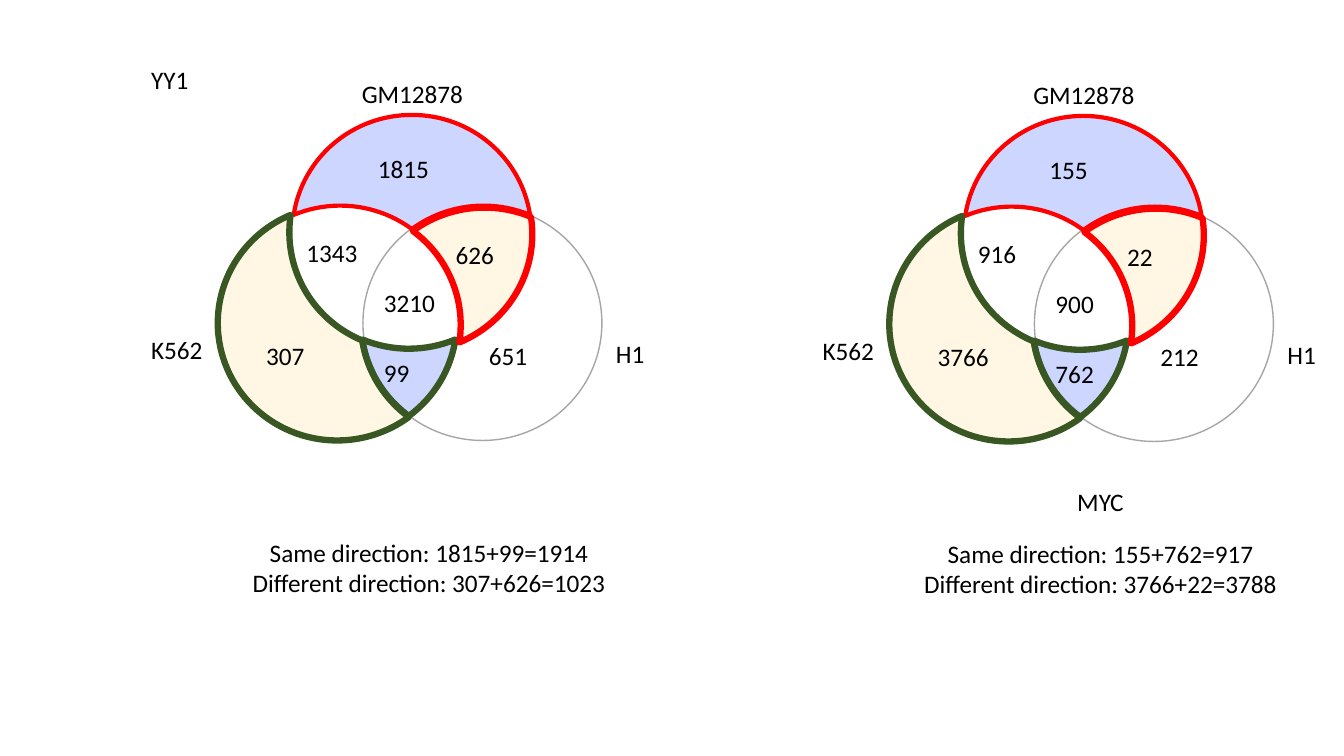
from dataclasses import dataclass
from math import atan2, ceil, cos, floor, hypot, pi, sin, sqrt, tan

from lxml import etree
from pptx import Presentation
from pptx.dml.color import RGBColor
from pptx.enum import shapes, text
from pptx.oxml import ns
from pptx.util import Inches, Pt

# Per panel: offset, title and its box, counts by region, summary lines
PANELS = [
    dict(offset=(0, 0), title="YY1", title_box=(1.4, 0.59, 0.58, 0.4), title_centred=False,
         counts=dict(K="307", G="1815", H="651", GK="1343", KH="99", GH="626", GKH="3210"),
         summary=["Same direction: 1815+99=1914", "Different direction: 307+626=1023"]),
    dict(offset=(6.66, 0.01), title="MYC", title_box=(10.33, 4.78, 1.17, 0.4), title_centred=True,
         counts=dict(K="3766", G="155", H="212", GK="916", KH="762", GH="22", GKH="900"),
         summary=["Same direction: 155+762=917", "Different direction: 3766+22=3788"]),
]
SET_LABELS = [("GM12878", (3.49, 0.73, 1.22, 0.4)), ("K562", (1.4, 3.27, 0.72, 0.4)),
              ("H1", (6.01, 3.31, 0.49, 0.4))]
COUNT_AT = dict(K=(2.54, 3.33), G=(3.65, 1.47), H=(4.75, 3.33), GK=(2.94, 2.31),
                KH=(3.71, 3.5), GH=(4.42, 2.33), GKH=(3.71, 2.8))
COUNT_SIZE = (0.82, 0.4)
SUMMARY_BOX = (2.38, 5.28, 3.75, 0.71)
CIRCLE_AT = dict(G=(2.89, 1.14), K=(2.18, 2.04), H=(3.6, 2.04))
CIRCLE_SIZE = (2.37, 2.33)
RX, RY = (side / 2 for side in CIRCLE_SIZE)
CENTRES = {name: (x + RX, y + RY) for name, (x, y) in CIRCLE_AT.items()}


@dataclass(frozen=True)
class Theme:
    font: str = "Calibri"
    size: int = 18
    ink: str = "000000"
    outline: str = "A6A6A6"
    blue: str = "0432FF"
    yellow: str = "FFD579"
    red: str = "FF0000"
    green: str = "385723"
    fill_alpha: int = 20
    thin: float = 1
    medium: float = 3
    thick: float = 4.5


THEME = Theme()


def crossings(a, b):
    """Both points where two circles meet, the upper one first."""
    (ax, ay), (bx, by) = CENTRES[a], CENTRES[b]
    dx, dy = (bx - ax) / RX / 2, (by - ay) / RY / 2
    half = hypot(dx, dy)
    k = sqrt(1 - half ** 2) / half
    mx, my = (ax + bx) / 2, (ay + by) / 2
    pair = [(mx - s * dy * k * RX, my + s * dx * k * RY) for s in (1, -1)]
    return sorted(pair, key=lambda point: point[1])


GK_OUT, GK_IN = crossings("G", "K")
GH_OUT, GH_IN = crossings("G", "H")
KH_TOP, KH_LOW = crossings("K", "H")

# Per region: start corner, arcs (circle, end corner, clockwise), nudge, fill, line, width
REGIONS = [
    (GK_OUT, [("G", GH_OUT, True), ("H", KH_TOP, False), ("K", GK_OUT, False)],
     (0.01, 0), THEME.blue, THEME.red, THEME.medium),
    (GK_IN, [("K", KH_LOW, True), ("H", GH_IN, True), ("G", GK_IN, False)],
     (-0.02, -0.01), THEME.blue, THEME.green, THEME.thick),
    (GK_OUT, [("G", GH_IN, False), ("H", KH_LOW, False), ("K", GK_OUT, True)],
     (-0.02, 0), THEME.yellow, THEME.green, THEME.thick),
    (KH_TOP, [("H", GH_OUT, True), ("G", GK_IN, True), ("K", KH_TOP, False)],
     (0.02, 0.02), THEME.yellow, THEME.red, THEME.thick),
]


def arc_curves(circle, start, end, clockwise):
    """Bezier curves (control, control, end) of an arc, split at its extreme points."""
    cx, cy = CENTRES[circle]
    a0, a1 = (atan2((y - cy) / RY, (x - cx) / RX) for x, y in (start, end))
    a1 = a0 + ((a1 - a0) % (2 * pi) if clockwise else -((a0 - a1) % (2 * pi)))
    low, high = sorted((a0, a1))
    quarter = pi / 2
    inner = [n * quarter for n in range(ceil(low / quarter), floor(high / quarter) + 1)]
    angles = sorted([low, *inner, high], reverse=not clockwise)
    curves = []
    for a, b in zip(angles, angles[1:]):
        k = 4 / 3 * tan((b - a) / 4)
        units = [(cos(a) - k * sin(a), sin(a) + k * cos(a)),
                 (cos(b) + k * sin(b), sin(b) - k * cos(b)), (cos(b), sin(b))]
        curves.append([(cx + RX * x, cy + RY * y) for x, y in units])
    return curves


def shifted(box, offset):
    return (box[0] + offset[0], box[1] + offset[1], *box[2:])


def emu(values):
    return [Inches(v) for v in values]


def set_line(sp, color, width):
    sp.shadow.inherit = False
    sp.line.color.rgb = RGBColor.from_string(color)
    sp.line.width = Pt(width)


def add_text(parent, lines, box, wrap=False, centred=False):
    tf = parent.add_textbox(*emu(box)).text_frame
    tf.word_wrap = wrap
    tf.auto_size = text.MSO_AUTO_SIZE.SHAPE_TO_FIT_TEXT
    for i, line in enumerate(lines):
        p = tf.add_paragraph() if i else tf.paragraphs[0]
        p.alignment = text.PP_ALIGN.CENTER if centred else text.PP_ALIGN.LEFT
        r = p.add_run()
        r.text = line
        r.font.name, r.font.size = THEME.font, Pt(THEME.size)
        r.font.color.rgb = RGBColor.from_string(THEME.ink)


def bend_sides(sp, curves):
    """Turn the straight sides of a freeform into the given curves."""
    sides = list(sp._element.iter(ns.qn("a:lnTo")))
    for side, curve in zip(sides, curves):
        bend = etree.Element(ns.qn("a:cubicBezTo"))
        for x, y in curve:
            pt = etree.SubElement(bend, ns.qn("a:pt"))
            pt.set("x", str(x - sp.left))
            pt.set("y", str(y - sp.top))
        side.getparent().replace(side, bend)


def add_region(parent, offset, start, arcs, nudge, fill, line, width):
    curves, corner = [], start
    for circle, end, clockwise in arcs:
        curves += arc_curves(circle, corner, end, clockwise)
        corner = end
    move = shifted(nudge, offset)
    curves = [[emu(shifted(point, move)) for point in curve] for curve in curves]
    builder = parent.build_freeform(*emu(shifted(start, move)))
    builder.add_line_segments([curve[-1] for curve in curves], close=True)
    sp = builder.convert_to_shape()
    bend_sides(sp, curves)
    sp.fill.solid()
    sp.fill.fore_color.rgb = RGBColor.from_string(fill)
    rgb = sp._element.spPr.find(ns.qn("a:solidFill")).find(ns.qn("a:srgbClr"))
    etree.SubElement(rgb, ns.qn("a:alpha")).set("val", str(THEME.fill_alpha * 1000))
    set_line(sp, line, width)


def add_venn(slide, offset, counts):
    venn = slide.shapes.add_group_shape().shapes
    for corner in CIRCLE_AT.values():
        sp = venn.add_shape(shapes.MSO_SHAPE.OVAL, *emu(shifted(corner + CIRCLE_SIZE, offset)))
        sp.fill.background()
        set_line(sp, THEME.outline, THEME.thin)
    for region in REGIONS:
        add_region(venn, offset, *region)
    for label, box in SET_LABELS:
        add_text(venn, [label], shifted(box, offset))
    for region, count in counts.items():
        add_text(venn, [count], shifted(COUNT_AT[region] + COUNT_SIZE, offset), wrap=True)


def main():
    prs = Presentation()
    prs.slide_width, prs.slide_height = Inches(13.33), Inches(7.5)
    slide = prs.slides.add_slide(prs.slide_layouts[6])
    for panel in PANELS:
        add_venn(slide, panel["offset"], panel["counts"])
        add_text(slide.shapes, [panel["title"]], panel["title_box"],
                 wrap=panel["title_centred"], centred=panel["title_centred"])
        add_text(slide.shapes, panel["summary"], shifted(SUMMARY_BOX, panel["offset"]),
                 centred=True)
    prs.save("out.pptx")


if __name__ == "__main__":
    main()
